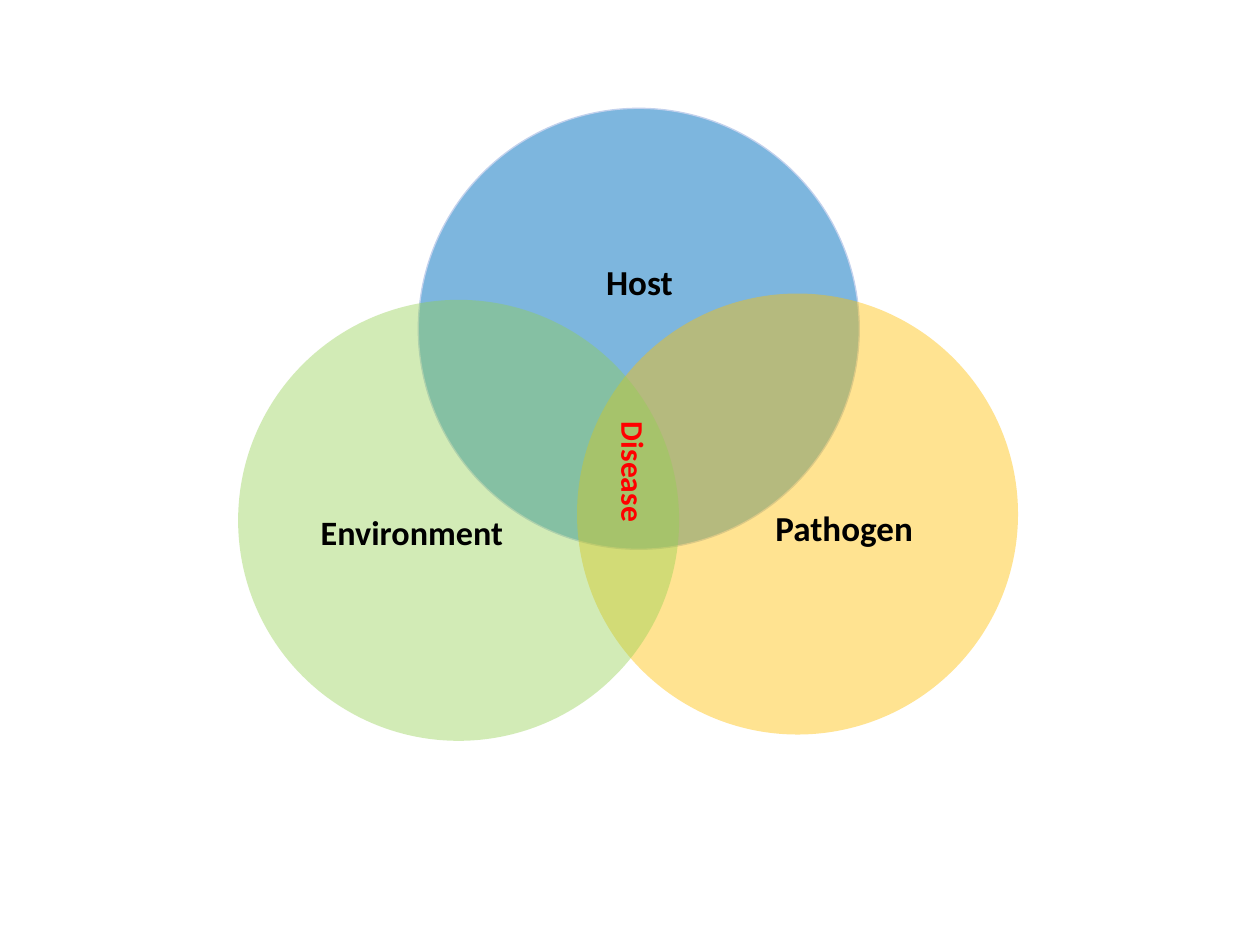
"""Build the disease triangle slide: three overlapping circles around Disease."""
from dataclasses import dataclass

from lxml import etree
from pptx import Presentation
from pptx.dml.color import RGBColor
from pptx.enum import shapes, text
from pptx.oxml import ns
from pptx.util import Inches, Pt


@dataclass(frozen=True)
class Theme:
    font: str = "Calibri"
    host: str = "0070C0"
    host_edge: str = "C2D1ED"
    pathogen: str = "FFC000"
    environment: str = "92D050"
    label: str = "000000"
    disease: str = "FF0000"
    label_size: float = 20
    environment_size: float = 19.5
    disease_size: float = 18


theme = Theme()
DIAMETER = 3.5

prs = Presentation()
prs.slide_width, prs.slide_height = Inches(10), Inches(7.5)
slide = prs.slides.add_slide(prs.slide_layouts[6])


def add_label(wording, box, size, color):
    label = slide.shapes.add_textbox(*map(Inches, box))
    label.text_frame.word_wrap = True
    run = label.text_frame.paragraphs[0].add_run()
    run.text = wording
    run.font.name, run.font.size, run.font.bold = theme.font, Pt(size), True
    run.font.color.rgb = RGBColor.from_string(color)
    return label


factors = [
    ("Host", (3.32, 0.86), theme.host, 51, theme.host_edge,
     (3.79, 1.47, 2.57, 1.57), theme.label_size),
    ("Pathogen", (4.58, 2.33), theme.pathogen, 43, None,
     (5.65, 3.24, 2.1, 1.93), theme.label_size),
    ("Environment", (1.89, 2.38), theme.environment, 41, None,
     (2.22, 3.28, 2.1, 1.93), theme.environment_size),
]

for factor, (left, top), color, opacity, edge, label_box, size in factors:
    circle = slide.shapes.add_shape(
        shapes.MSO_SHAPE.OVAL, Inches(left), Inches(top), Inches(DIAMETER), Inches(DIAMETER))
    circle.shadow.inherit = False
    circle.fill.solid()
    circle.fill.fore_color.rgb = RGBColor.from_string(color)
    fill_color = circle.fill._xPr.find(ns.qn("a:solidFill"))[0]
    etree.SubElement(fill_color, ns.qn("a:alpha"), val=str(opacity * 1000))
    if edge:
        circle.line.color.rgb = RGBColor.from_string(edge)
        circle.line.width = Pt(0.75)
    else:
        circle.line.fill.background()

    frame = add_label(factor, label_box, size, theme.label).text_frame
    frame.margin_left = frame.margin_right = frame.margin_top = frame.margin_bottom = 0
    frame.vertical_anchor = text.MSO_ANCHOR.MIDDLE
    frame.paragraphs[0].alignment = text.PP_ALIGN.CENTER
    frame.paragraphs[0].line_spacing = 0.9

disease = add_label("Disease", (4.49, 3.59, 1.08, 0.4), theme.disease_size, theme.disease)
disease.rotation = 90
disease.text_frame.auto_size = text.MSO_AUTO_SIZE.SHAPE_TO_FIT_TEXT

prs.save("out.pptx")
